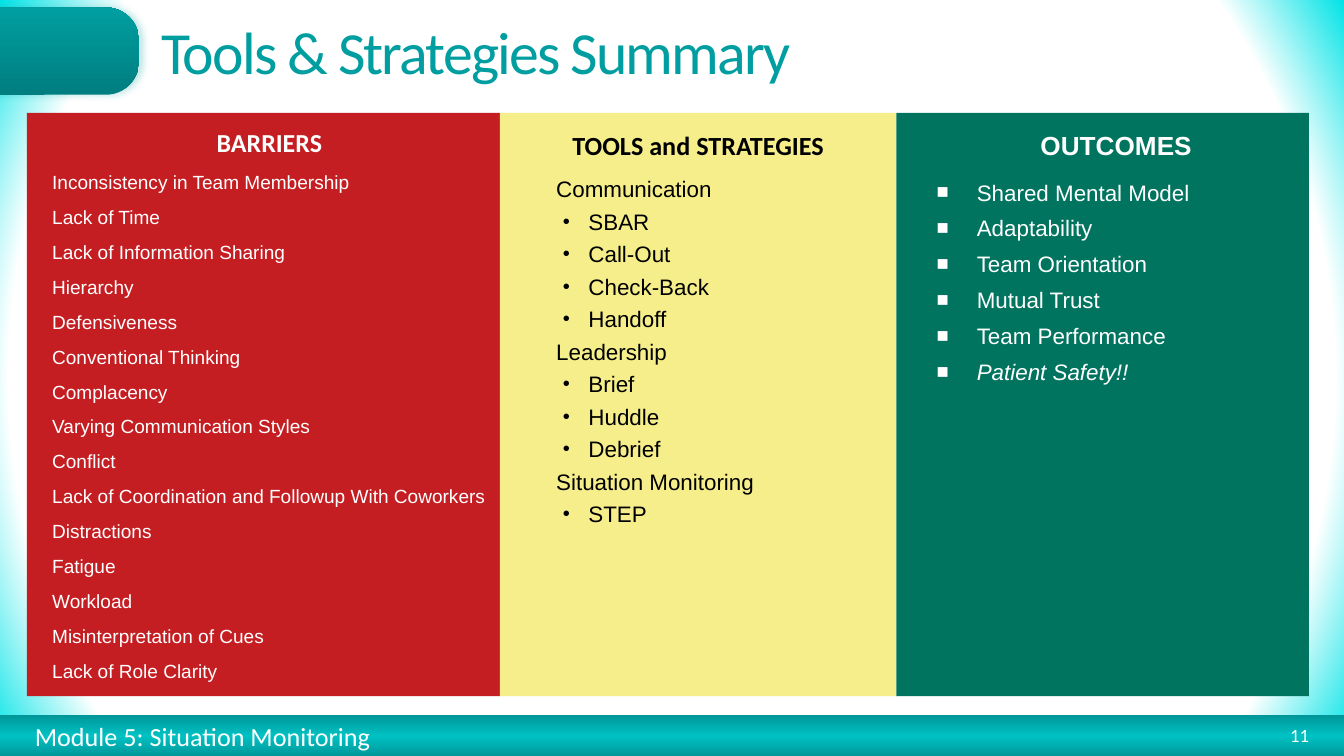
from lxml import etree
from pptx import Presentation
from pptx.dml.color import RGBColor
from pptx.enum.shapes import MSO_SHAPE
from pptx.enum.text import MSO_ANCHOR, PP_ALIGN
from pptx.oxml.ns import qn
from pptx.util import Pt

RECTANGLE = MSO_SHAPE.RECTANGLE
TAB = MSO_SHAPE.ROUND_2_SAME_RECTANGLE
TOP, MIDDLE = MSO_ANCHOR.TOP, MSO_ANCHOR.MIDDLE
LEFT, CENTER, RIGHT = PP_ALIGN.LEFT, PP_ALIGN.CENTER, PP_ALIGN.RIGHT
EMU_PER_PX = 9144
TEAL, WHITE, BLACK = "009EA0", "FFFFFF", "000000"

BARRIERS = [
    "Inconsistency in Team Membership", "Lack of Time", "Lack of Information Sharing",
    "Hierarchy", "Defensiveness", "Conventional Thinking", "Complacency",
    "Varying Communication Styles", "Conflict",
    "Lack of Coordination and Followup With Coworkers", "Distractions", "Fatigue",
    "Workload", "Misinterpretation of Cues", "Lack of Role Clarity",
]
TOOLS = {
    "Communication": ["SBAR", "Call-Out", "Check-Back", "Handoff"],
    "Leadership": ["Brief", "Huddle", "Debrief"],
    "Situation Monitoring": ["STEP"],
}
OUTCOMES = ["Shared Mental Model", "Adaptability", "Team Orientation",
            "Mutual Trust", "Team Performance"]


def px(length):
    return length * EMU_PER_PX


def color(hex_string):
    return RGBColor.from_string(hex_string)


def add_element(parent, tag, **attributes):
    return etree.SubElement(parent, qn(tag), {k: str(v) for k, v in attributes.items()})


def set_gradient(fill, element, stops, angle=None):
    fill.gradient()
    gradient = element.xpath(".//a:gradFill")[0]
    for child in list(gradient):
        gradient.remove(child)
    stop_list = add_element(gradient, "a:gsLst")
    for position, hex_string in stops:
        stop = add_element(stop_list, "a:gs", pos=position * 1000)
        add_element(stop, "a:srgbClr", val=hex_string)
    if angle is None:
        center = add_element(gradient, "a:path", path="circle")
        add_element(center, "a:fillToRect", l=50000, t=50000, r=50000, b=50000)
    else:
        add_element(gradient, "a:lin", ang=angle * 60000, scaled=0)


def add_box(slide, box, kind=RECTANGLE):
    shape = slide.shapes.add_shape(kind, *map(px, box))
    shape.shadow.inherit = False
    shape.line.fill.background()
    return shape


def set_frame(shape, anchor, insets):
    frame = shape.text_frame
    frame.word_wrap = True
    frame.vertical_anchor = anchor
    frame.margin_left, frame.margin_top, frame.margin_right, frame.margin_bottom = map(px, insets)
    return frame


def format_text(paragraph, text, size, font, hex_string, align=LEFT, bold=False, italic=False):
    paragraph.text = text
    paragraph.alignment = align
    run = paragraph.runs[0]
    run.font.size = Pt(size)
    run.font.name = font
    run.font.color.rgb = color(hex_string)
    run.font.bold = bold
    run.font.italic = italic
    return run


def set_indent(paragraph, margin, indent, bullet=None):
    properties = paragraph._p.get_or_add_pPr()
    properties.set("marL", str(px(margin)))
    properties.set("indent", str(px(indent)))
    if bullet:
        add_element(properties, "a:buSzPct", val=90000)
        add_element(properties, "a:buFont", typeface="Arial")
        add_element(properties, "a:buChar", char=bullet)
    else:
        add_element(properties, "a:buNone")


def add_label(slide, box, text, size, hex_string, align=LEFT, insets=(0, 0, 0, 0)):
    shape = slide.shapes.add_textbox(*map(px, box))
    frame = set_frame(shape, MIDDLE, insets)
    return format_text(frame.paragraphs[0], text, size, "Calibri", hex_string, align)


def add_footer(slide, box):
    left, top, width, height = box
    bar = add_box(slide, box)
    set_gradient(bar.fill, bar.element, [(0, "009698"), (50, "00C1C3"), (100, "009698")], 90)
    add_label(slide, (left + 35, top + 2, 536, 28), "Module 5: Situation Monitoring", 14, WHITE)
    add_label(slide, (left + width - 115, top + 1, 81, 28), "11", 10, WHITE, RIGHT)


def add_header(slide, box):
    left, top, width, height = box
    tab = add_box(slide, (left + 15, top - 18, 65, 112), TAB)
    tab.rotation = 90
    tab.adjustments[0], tab.adjustments[1] = 0.38, 0.01
    set_gradient(tab.fill, tab.element, [(0, "007E80"), (100, TEAL)], 180)
    effects = tab.element.spPr.find(qn("a:effectLst"))
    shadow = add_element(effects, "a:outerShdw", blurRad=Pt(4), dist=Pt(2), dir=0, rotWithShape=0)
    shade = add_element(shadow, "a:srgbClr", val=TEAL)
    add_element(shade, "a:alpha", val=25000)
    title = add_label(slide, (left + 110, top, width - 123, height),
                      "Tools & Strategies Summary", 32, TEAL, insets=(10, 5, 10, 5))
    title.font._element.set("spc", "-100")


def add_column(slide, box, fill, heading, size, font, hex_string, indent, line_spacing):
    panel = add_box(slide, box)
    panel.fill.solid()
    panel.fill.fore_color.rgb = color(fill)
    frame = set_frame(panel, TOP, (10, 15, 10, 5))
    paragraph = frame.paragraphs[0]
    set_indent(paragraph, *indent)
    format_text(paragraph, heading, size, font, hex_string, CENTER, bold=True)
    paragraph.line_spacing = line_spacing
    paragraph.space_after = Pt(4.5)
    return frame


def add_item(frame, text, size, hex_string, indent, bullet=None, before=0, italic=False):
    paragraph = frame.add_paragraph()
    set_indent(paragraph, *indent, bullet)
    format_text(paragraph, text, size, "Arial", hex_string, italic=italic)
    paragraph.space_before = Pt(before)
    return paragraph


def add_barriers(slide, box):
    indent = (28, -19)
    frame = add_column(slide, box, "C41E22", "BARRIERS", 13.9, "Calibri", WHITE, indent, 0.8)
    for text in BARRIERS:
        paragraph = add_item(frame, text, 10.2, WHITE, indent)
        paragraph.line_spacing = 1.2
        paragraph.space_after = Pt(4)


def add_tools(slide, box):
    frame = add_column(slide, box, "F5EE8B", "TOOLS and STRATEGIES", 14, "Calibri", BLACK,
                       (0, 0), 0.9)
    for group, tools in TOOLS.items():
        add_item(frame, group, 12, BLACK, (32, 0), before=3)
        for tool in tools:
            add_item(frame, tool, 12, BLACK, (56, -19), "•", 3)


def add_outcomes(slide, box):
    indent = (50, -30)
    frame = add_column(slide, box, "017460", "OUTCOMES", 14, "Arial", WHITE, indent, 0.9)
    for text in OUTCOMES:
        add_item(frame, text, 12, WHITE, indent, "■", 4.8)
    add_item(frame, "Patient Safety!!", 12, WHITE, indent, "■", 4.8, italic=True)


def add_columns(slide, box):
    left, top, width, height = box
    for add_region, column_width in ((add_barriers, 352), (add_tools, 295), (add_outcomes, 307)):
        add_region(slide, (left, top, column_width, height))
        left += column_width


def main():
    presentation = Presentation()
    presentation.slide_width = px(1000)
    presentation.slide_height = px(1000) * 9 // 16
    slide = presentation.slides.add_slide(presentation.slide_layouts[6])
    set_gradient(slide.background.fill, slide.element, [(0, WHITE), (86, WHITE), (100, "00E3E6")])
    add_footer(slide, (-9, 532, 1017, 31))
    add_header(slide, (0, 0, 1000, 75))
    add_columns(slide, (20, 84, 954, 434))
    presentation.save("out.pptx")


if __name__ == "__main__":
    main()
